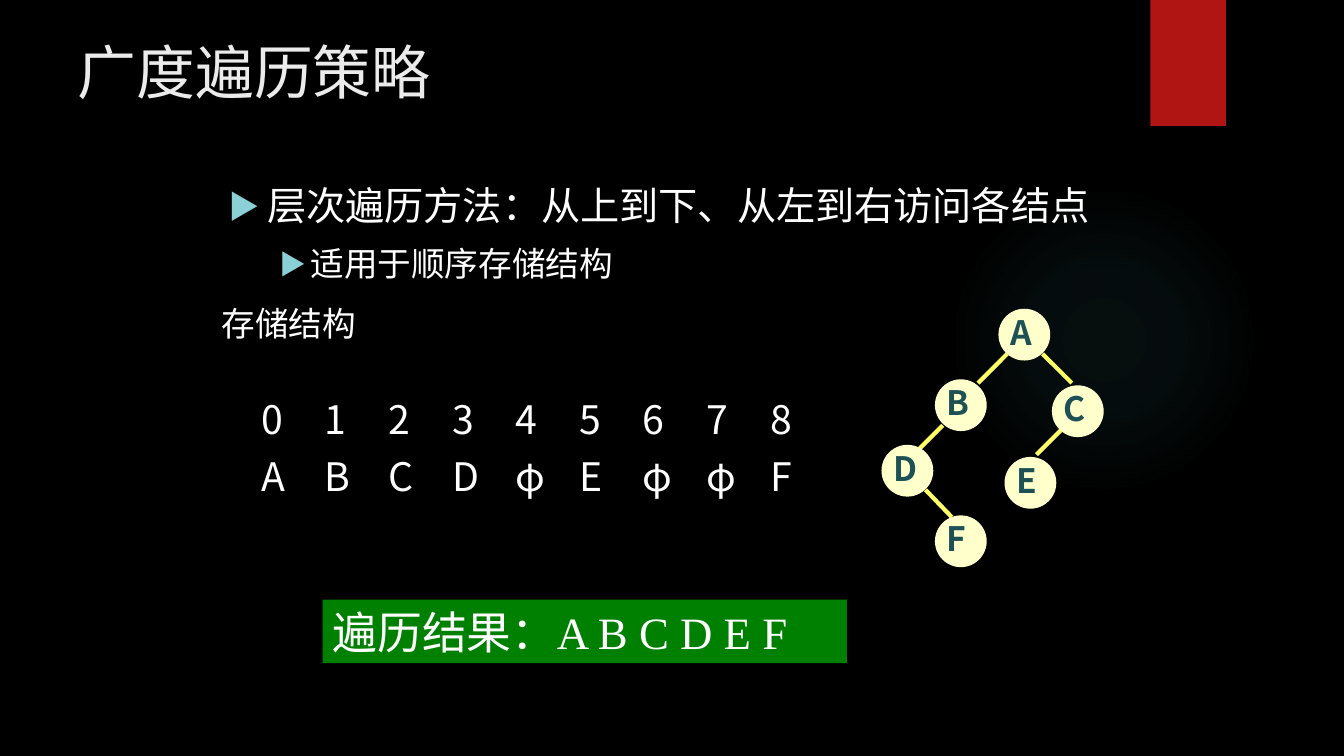
from lxml import etree
from pptx import Presentation
from pptx import util as u
from pptx.dml.color import RGBColor
from pptx.enum import shapes, text
from pptx.oxml import parse_xml
from pptx.oxml.ns import nsdecls, qn

COLORS = {
    "background": "000000", "ribbon": "B01513", "glow": "50B9C1",
    "title": "EBEBEB", "body": "FFFFFF", "bullet": "8AD0D6",
    "node": "FFFFCC", "letter": "1E5155", "edge": "FFFF66", "result": "008000",
}
CJK = "Noto Sans CJK SC"


def rgb(name):
    return RGBColor.from_string(COLORS[name])


class SlideBuilder:
    """Holds the style and the current slide."""

    title_style = {"size": u.Pt(42), "name": "Quicksand"}
    serif = "Times New Roman"

    def __init__(self, presentation):
        self.slide = presentation.slides.add_slide(presentation.slide_layouts[1])
        fill = self.slide.background.fill
        fill.solid()
        fill.fore_color.rgb = rgb("background")

    def add_text(self, paragraph, content, color, east_asian=CJK, **style):
        run = paragraph.add_run()
        run.text = content
        for attribute, value in style.items():
            setattr(run.font, attribute, value)
        run.font.color.rgb = rgb(color)
        etree.SubElement(run.font._element, qn("a:ea")).set("typeface", east_asian)

    def frame(self, shape, **style):
        defaults = {"word_wrap": True, "auto_size": text.MSO_AUTO_SIZE.NONE,
                    "vertical_anchor": text.MSO_ANCHOR.MIDDLE}
        for attribute, value in {**defaults, **style}.items():
            setattr(shape.text_frame, attribute, value)
        paragraph = shape.text_frame.paragraphs[0]
        paragraph.alignment = text.PP_ALIGN.LEFT
        return paragraph

    def place(self, shape, box):
        for attribute, value in zip(("left", "top", "width", "height"), box):
            setattr(shape, attribute, u.Inches(value))

    def title(self, content, box):
        shape = self.slide.shapes.title
        self.place(shape, box)
        paragraph = self.frame(shape, vertical_anchor=text.MSO_ANCHOR.TOP)
        self.add_text(paragraph, content, "title", "Quicksand", **self.title_style)

    def bullets(self, items, box):
        shape = self.slide.placeholders[1]
        self.place(shape, box)
        paragraph = self.frame(shape, vertical_anchor=text.MSO_ANCHOR.TOP)
        for level, (content, size, margin, hanging) in enumerate(items):
            if level:
                paragraph = shape.text_frame.add_paragraph()
            paragraph.level = level
            properties = paragraph._p.get_or_add_pPr()
            properties.set("marL", str(u.Inches(margin)))
            properties.set("indent", str(-u.Inches(hanging)))
            color = etree.SubElement(properties, qn("a:buClr"))
            etree.SubElement(color, qn("a:srgbClr")).set("val", COLORS["bullet"])
            etree.SubElement(properties, qn("a:buSzPct")).set("val", "80000")
            etree.SubElement(properties, qn("a:buFont")).set("typeface", CJK)
            etree.SubElement(properties, qn("a:buChar")).set("char", "▶")
            paragraph.space_before = u.Pt(10 if level else 0)
            self.add_text(paragraph, content, "body", "Quicksand",
                          size=u.Pt(size), name="Quicksand")

    def shape(self, kind, box, color, parent=None, outlined=False):
        shape = (parent or self.slide.shapes).add_shape(kind, *map(u.Inches, box))
        shape.shadow.inherit = False
        shape.fill.solid()
        shape.fill.fore_color.rgb = rgb(color)
        if outlined:
            shape.line.color.rgb = rgb(color)
            shape.line.width = u.Pt(1)
        else:
            shape.line.fill.background()
        return shape

    def send_to_back(self, shape):
        self.slide.shapes._spTree.insert(2, shape._element)

    def glow(self, box):
        shape = self.shape(shapes.MSO_SHAPE.OVAL, box, "glow")
        stops = "".join(
            f'<a:gs pos="{position}000"><a:srgbClr val="{COLORS["glow"]}">'
            f'<a:alpha val="{alpha}000"/></a:srgbClr></a:gs>'
            for position, alpha in ((0, 7), (36, 6), (69, 0)))
        gradient = parse_xml(
            f'<a:gradFill {nsdecls("a")}><a:gsLst>{stops}</a:gsLst><a:path path="circle">'
            '<a:fillToRect l="50000" t="50000" r="50000" b="50000"/></a:path></a:gradFill>')
        properties = shape._element.spPr
        properties.replace(properties.find(qn("a:solidFill")), gradient)
        self.send_to_back(shape)

    def label(self, content, box, color, parent=None, wrap=True, inset=0.1, **style):
        shape = (parent or self.slide.shapes).add_textbox(*map(u.Inches, box))
        paragraph = self.frame(shape, word_wrap=wrap, margin_left=u.Inches(inset))
        self.add_text(paragraph, content, color, size=u.Pt(24), **style)

    def edge(self, parent, start, end):
        line = parent.add_connector(shapes.MSO_CONNECTOR.STRAIGHT,
                                    *map(u.Inches, start + end))
        line.line.color.rgb = rgb("edge")
        line.line.width = u.Pt(3)
        etree.SubElement(line._element.spPr, qn("a:effectLst"))

    def tree(self, nodes, edges):
        group = self.slide.shapes.add_group_shape().shapes
        for letter, (left, top) in nodes.items():
            self.shape(shapes.MSO_SHAPE.OVAL, (left, top, 0.5, 0.5), "node", group, True)
            self.label(letter, (left - 0.04, top - 0.03, 0.7, 0.5), "letter", group,
                       inset=0.15, name=CJK, bold=True)
        for start, end in edges:
            self.edge(group, start, end)

    def table(self, rows, box):
        table = self.slide.shapes.add_table(len(rows), len(rows[0]),
                                            *map(u.Inches, box)).table
        table.first_row = table.horz_banding = False
        for row, values in enumerate(rows):
            for column, value in enumerate(values):
                cell = table.cell(row, column)
                cell.margin_top = cell.margin_bottom = 0
                self.add_text(cell.text_frame.paragraphs[0], value, "body",
                              size=u.Pt(28), name=CJK)
                for side in ("lnL", "lnR", "lnT", "lnB"):
                    cell._tc.get_or_add_tcPr().append(parse_xml(
                        f'<a:{side} {nsdecls("a")} w="12700"><a:solidFill><a:srgbClr '
                        f'val="{COLORS["background"]}"/></a:solidFill></a:{side}>'))
                cell.fill.background()

    def result(self, content, box):
        shape = self.shape(shapes.MSO_SHAPE.RECTANGLE, box, "result")
        self.add_text(self.frame(shape), content, "body", size=u.Pt(32), name=self.serif)


def main():
    presentation = Presentation()
    presentation.slide_width = u.Inches(13.33)
    presentation.slide_height = u.Inches(7.5)
    builder = SlideBuilder(presentation)

    # Backdrop
    ribbon = builder.shape(shapes.MSO_SHAPE.RECTANGLE, (11.41, 0, 0.75, 1.25), "ribbon")
    builder.send_to_back(ribbon)
    builder.glow((9.41, 1.83, 3.08, 3.08))

    # Title and list
    builder.title("广度遍历策略", (0.67, 0.3, 12, 1.25))
    builder.bullets([("层次遍历方法：从上到下、从左到右访问各结点", 28, 0.38, 0.38),
                     ("适用于顺序存储结构", 24, 0.81, 0.31)], (2.17, 1.75, 8.99, 1.37))

    # Binary tree
    nodes = {"A": (9.91, 3.07), "F": (9.28, 5.12), "E": (9.97, 4.54),
             "D": (8.75, 4.42), "C": (10.44, 3.83), "B": (9.28, 3.77)}
    edges = [((9.99, 3.51), (9.7, 3.8)), ((9.18, 4.86), (9.44, 5.13)),
             ((10.34, 3.51), (10.63, 3.8)), ((10.52, 4.27), (10.28, 4.51)),
             ((9.35, 4.22), (9.12, 4.45))]
    builder.tree(nodes, edges)

    # Sequential storage
    builder.label("存储结构", (2.1, 2.96, 1.53, 0.5), "body", wrap=False,
                  name=builder.serif)
    builder.table(["012345678", "ABCDφEφφF"], (2.49, 3.86, 5.68, 1.13))

    # Traversal result
    builder.result("遍历结果：A B C D E F", (3.2, 5.95, 5.2, 0.63))

    presentation.save("out.pptx")


if __name__ == "__main__":
    main()
